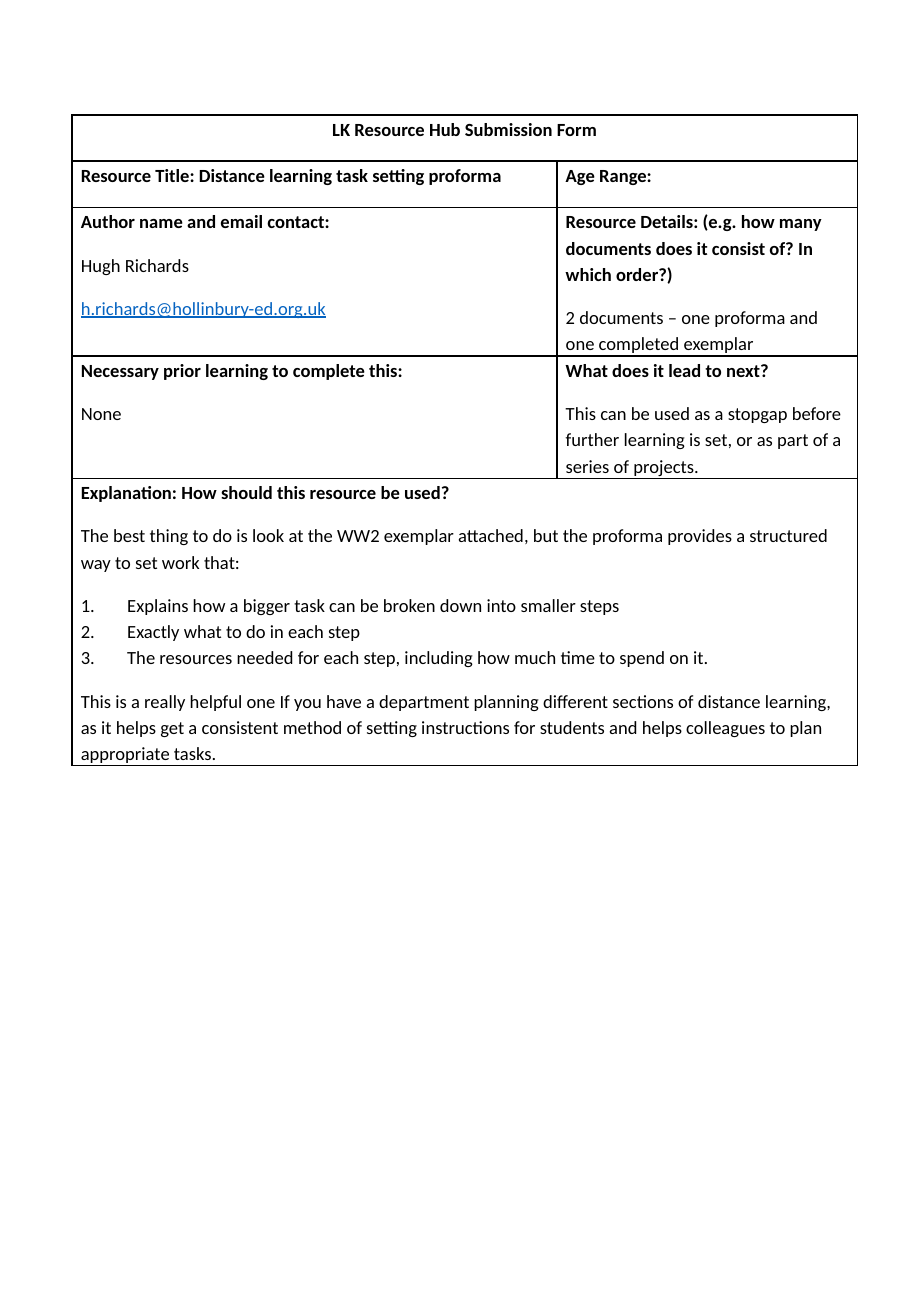
from lxml import etree
from pptx import Presentation
from pptx.dml.color import RGBColor
from pptx.enum.text import PP_ALIGN
from pptx.oxml.ns import qn
from pptx.util import Cm, Pt

CENTER, LEFT = PP_ALIGN.CENTER, PP_ALIGN.LEFT
COLORS = {"text": "000000", "link": "0563C1", "paper": "FFFFFF", "border": "000000"}
FONT, FONT_SIZE = "Calibri", Pt(11)
PAGE_SIZE = Cm(19.05), Cm(27.51)
TABLE_LEFT, TABLE_TOP = Cm(1.51), Cm(2.4)
COLUMN_WIDTHS = [Cm(10.14), Cm(6.28)]
ROW_HEIGHTS = [Cm(0.97), Cm(0.97), Cm(2.95), Cm(2.44), Cm(5.84)]
SIDE_MARGIN = Cm(0.18)
LIST_INDENT = Cm(0.97)

# Each row lists its cells; a single cell spans the row.
# Each cell lists its paragraphs as (kind, text).
FORM_ROWS = [
    [[("title", "LK Resource Hub Submission Form")]],
    [
        [("heading", "Resource Title: Distance learning task setting proforma")],
        [("heading", "Age Range:")],
    ],
    [
        [
            ("heading", "Author name and email contact:"),
            ("body", "Hugh Richards"),
            ("link", "h.richards@hollinbury-ed.org.uk"),
        ],
        [
            ("heading", "Resource Details: (e.g. how many documents does it "
                        "consist of? In which order?)"),
            ("body", "2 documents – one proforma and one completed exemplar"),
        ],
    ],
    [
        [("heading", "Necessary prior learning to complete this:"), ("body", "None")],
        [
            ("heading", "What does it lead to next?"),
            ("body", "This can be used as a stopgap before further learning is set, "
                     "or as part of a series of projects."),
        ],
    ],
    [[
        ("heading", "Explanation: How should this resource be used?"),
        ("body", "The best thing to do is look at the WW2 exemplar attached, but the "
                 "proforma provides a structured way to set work that:"),
        ("step", "Explains how a bigger task can be broken down into smaller steps"),
        ("step", "Exactly what to do in each step"),
        ("last step", "The resources needed for each step, including how much time "
                      "to spend on it."),
        ("body", "This is a really helpful one If you have a department planning "
                 "different sections of distance learning, as it helps get a consistent "
                 "method of setting instructions for students and helps colleagues to "
                 "plan appropriate tasks."),
    ]],
]


def add_numbering(para):
    properties = para._p.get_or_add_pPr()
    properties.set("marL", str(LIST_INDENT))
    properties.set("indent", str(-LIST_INDENT))
    font = etree.SubElement(properties, qn("a:buFont"))
    font.set("typeface", "+mj-lt")
    number = etree.SubElement(properties, qn("a:buAutoNum"))
    number.set("type", "arabicPeriod")


def write_paragraph(para, kind, text):
    para.alignment = CENTER if kind == "title" else LEFT
    para.line_spacing = 1.15
    para.space_after = Pt(0 if kind == "step" else 10)
    if kind in ("step", "last step"):
        add_numbering(para)
    span = para.add_run()
    span.text = text
    span.font.name = FONT
    span.font.size = FONT_SIZE
    span.font.bold = kind in ("title", "heading")
    span.font.underline = kind == "link"
    color = COLORS["link" if kind == "link" else "text"]
    span.font.color.rgb = RGBColor.from_string(color)


def style_cell(cell):
    """Draw thin borders on all four sides, then set margins and fill."""
    properties = cell._tc.get_or_add_tcPr()
    for side in ("a:lnL", "a:lnR", "a:lnT", "a:lnB"):
        line = etree.SubElement(properties, qn(side))
        line.set("w", str(Pt(1)))
        fill = etree.SubElement(line, qn("a:solidFill"))
        etree.SubElement(fill, qn("a:srgbClr")).set("val", COLORS["border"])
    cell.margin_left = cell.margin_right = SIDE_MARGIN
    cell.margin_top = cell.margin_bottom = 0
    cell.fill.solid()
    cell.fill.fore_color.rgb = RGBColor.from_string(COLORS["paper"])


def write_cell(cell, paragraphs):
    frame = cell.text_frame
    for index, (kind, text) in enumerate(paragraphs):
        para = frame.add_paragraph() if index else frame.paragraphs[0]
        write_paragraph(para, kind, text)


def add_form(page):
    table = page.shapes.add_table(
        len(ROW_HEIGHTS), len(COLUMN_WIDTHS), TABLE_LEFT, TABLE_TOP,
        sum(COLUMN_WIDTHS), sum(ROW_HEIGHTS)).table
    table.first_row = table.horz_banding = False
    for column, width in zip(table.columns, COLUMN_WIDTHS):
        column.width = width
    for row, height in zip(table.rows, ROW_HEIGHTS):
        row.height = height
    for cell in table.iter_cells():
        style_cell(cell)
    for row_index, cells in enumerate(FORM_ROWS):
        if len(cells) == 1:
            table.cell(row_index, 0).merge(table.cell(row_index, 1))
        for column_index, paragraphs in enumerate(cells):
            write_cell(table.cell(row_index, column_index), paragraphs)


def main():
    deck = Presentation()
    deck.slide_width, deck.slide_height = PAGE_SIZE
    page = deck.slides.add_slide(deck.slide_layouts[6])
    add_form(page)
    deck.save("out.pptx")


if __name__ == "__main__":
    main()
